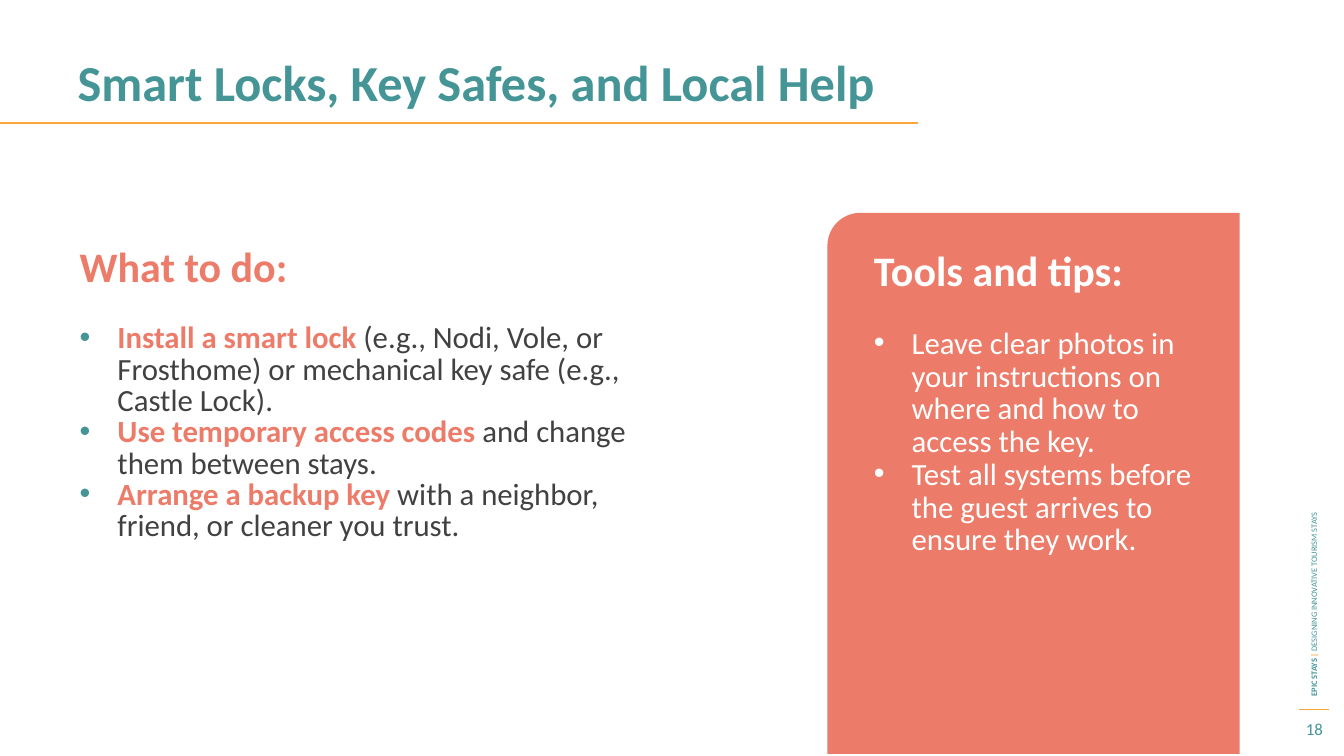
from pptx import Presentation
from pptx.dml.color import RGBColor
from pptx.enum.shapes import MSO_CONNECTOR as Connector, MSO_SHAPE as Preset
from pptx.enum.text import MSO_ANCHOR as Anchor, MSO_AUTO_SIZE as AutoSize, PP_ALIGN as Align
from pptx.oxml.ns import qn
from pptx.util import Pt
from lxml.etree import SubElement

TEAL, CORAL, ORANGE, DARK, WHITE = "459597", "EC7C69", "FBA63B", "414141", "FFFFFF"
COMPARISON_LAYOUT = 4
INDENT = 27

ACTIONS = [
    [("Install a smart lock ", CORAL, True),
     ("(e.g., Nodi, Vole, or Frosthome) or mechanical key safe (e.g., Castle Lock).", DARK, False)],
    [("Use temporary access codes ", CORAL, True),
     ("and change them between stays.", DARK, False)],
    [("Arrange a backup key ", CORAL, True),
     ("with a neighbor, friend, or cleaner you trust.", DARK, False)],
]
TIPS = [
    [("Leave clear photos in your instructions on where and how to access the key.", WHITE, False)],
    [("Test all systems before the guest arrives to ensure they work.", WHITE, False)],
]


def rgb(color):
    return RGBColor.from_string(color)


def set_values(target, values):
    for name, value in values.items():
        setattr(target, name, value)


def place(shape, left, top, width, height):
    set_values(shape, {"left": Pt(left), "top": Pt(top), "width": Pt(width), "height": Pt(height)})


def add_bullet(para, color):
    properties = para._p.get_or_add_pPr()
    properties.set("marL", str(Pt(INDENT)))
    properties.set("indent", str(-Pt(INDENT)))
    tint = SubElement(properties, qn("a:buClr"))
    SubElement(tint, qn("a:srgbClr"), val=color)
    SubElement(properties, qn("a:buFont"), typeface="Arial")
    SubElement(properties, qn("a:buChar"), char="•")


def write(box, paragraphs, size, spacing=None, align=Align.LEFT, anchor=Anchor.TOP, bullet=None):
    """Fill a box with paragraphs, each a list of (text, color, bold) spans."""
    frame = box.text_frame
    set_values(frame, {"word_wrap": True, "auto_size": AutoSize.NONE, "vertical_anchor": anchor})
    for index, spans in enumerate(paragraphs):
        para = frame.add_paragraph() if index else frame.paragraphs[0]
        if bullet:
            add_bullet(para, bullet)
        set_values(para, {"alignment": align, "space_before": Pt(0),
                          "line_spacing": Pt(spacing) if spacing else None})
        for text, color, bold in spans:
            span = para.add_run()
            span.text = text
            set_values(span.font, {"name": "Calibri", "size": Pt(size), "bold": bold})
            span.font.color.rgb = rgb(color)


def add_text(page, left, top, width, height, spans, **style):
    box = page.shapes.add_textbox(Pt(left), Pt(top), Pt(width), Pt(height))
    write(box, [spans], **style)
    return box


def add_rule(page, left, right, y, weight):
    rule = page.shapes.add_connector(Connector.STRAIGHT, Pt(left), Pt(y), Pt(right), Pt(y))
    rule.line.color.rgb = rgb(ORANGE)
    rule.line.width = Pt(weight)
    SubElement(rule._element.spPr, qn("a:effectLst"))


def add_panel(page, left, top, width, height):
    """Add the coral panel with a round top left corner, behind the text."""
    panel = page.shapes.add_shape(Preset.ROUND_1_RECTANGLE,
                                  Pt(left), Pt(top), Pt(width), Pt(height))
    panel.adjustments[0] = 0.08
    panel.shadow.inherit = False
    panel.fill.solid()
    panel.fill.fore_color.rgb = rgb(CORAL)
    panel.line.fill.background()
    panel._element.spPr.find(qn("a:xfrm")).set("flipH", "1")
    page.shapes.title._element.addprevious(panel._element)


def main():
    deck = Presentation()
    set_values(deck, {"slide_width": Pt(960), "slide_height": Pt(540)})
    page = deck.slides.add_slide(deck.slide_layouts[COMPARISON_LAYOUT])
    title, actions_head, actions, tips_head, tips = page.placeholders

    add_panel(page, 591, 152, 294.5, 386.5)
    place(title, 48.2, 38.9, 864, 63.4)
    write(title, [[("Smart Locks, Key Safes, and Local Help", TEAL, True)]], 36, 37.2)
    add_rule(page, 0, 656, 87.8, 1.5)

    place(actions_head, 49.7, 175, 442, 52.5)
    write(actions_head, [[("What to do:", CORAL, True)]], 30, 29)
    place(actions, 49.7, 227.5, 442, 288)
    write(actions, ACTIONS, 22, 22.4, bullet=TEAL)

    place(tips_head, 617, 183.6, 248.4, 46.8)
    write(tips_head, [[("Tools and tips:", WHITE, True)]], 30, 23.4)
    place(tips, 617, 230.4, 248.4, 212)
    write(tips, TIPS, 22, 23.4, bullet=WHITE)

    footer = add_text(page, 730.8, 289.4, 415.4, 14.4,
                      [("EPIC STAYS ", TEAL, True), ("| ", ORANGE, True),
                       ("DESIGNING INNOVATIVE TOURISM STAYS", TEAL, False)],
                      size=6, anchor=Anchor.MIDDLE)
    footer.rotation = 270
    add_rule(page, 928, 949, 507, 0.75)
    add_text(page, 920.2, 508.3, 37.4, 24.5, [("18", TEAL, False)],
             size=12, align=Align.CENTER, anchor=Anchor.MIDDLE)
    deck.save("out.pptx")


if __name__ == "__main__":
    main()
